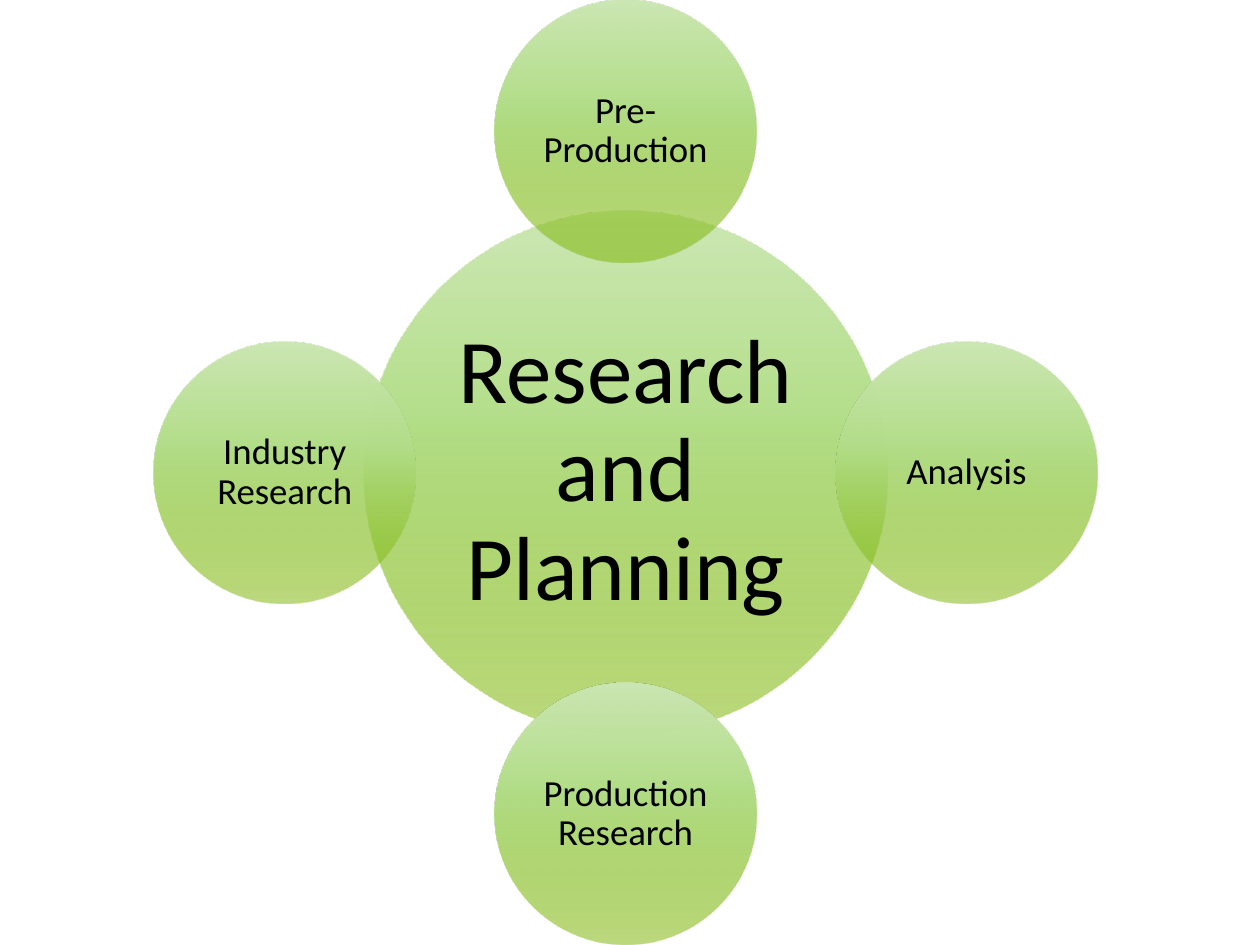
from dataclasses import dataclass

from lxml.etree import SubElement
from pptx import Presentation
from pptx.dml.color import RGBColor
from pptx.enum.shapes import MSO_SHAPE
from pptx.enum.text import MSO_ANCHOR, PP_ALIGN
from pptx.oxml.ns import qn
from pptx.util import Inches, Pt


@dataclass(frozen=True)
class Theme:
    """Colours and type sizes of the slide."""
    font: str = "Calibri"
    text: str = "000000"
    hub_size: int = 52
    satellite_size: int = 21
    stops: tuple = ((0, "CCE7B4", 100), (40, "B3DE89", 100), (100, "7CB400", 50))


THEME = Theme()
HUB = 4.16
SATELLITE = HUB / 2
SATELLITES = (
    ("Pre-Production", 0, -1),
    ("Analysis", 1, 0),
    ("Production Research", 0, 1),
    ("Industry Research", -1, 0),
)


def fill_gradient(shape):
    """Fill a shape from top to bottom with the theme's gradient stops."""
    shape.fill.gradient()
    shape.fill.gradient_angle = 270
    stop_list = shape.element.spPr.find(qn("a:gradFill")).find(qn("a:gsLst"))
    for stop in list(stop_list):
        stop_list.remove(stop)
    for position, colour, opacity in THEME.stops:
        stop = SubElement(stop_list, qn("a:gs"), pos=str(position * 1000))
        tint = SubElement(stop, qn("a:srgbClr"), val=colour)
        if opacity < 100:
            SubElement(tint, qn("a:alpha"), val=str(opacity * 1000))


def add_circle(page, box, label, size, inset):
    """Place a labelled gradient circle in the box (left, top, width, height)."""
    circle = page.shapes.add_shape(MSO_SHAPE.OVAL, *map(Inches, box))
    circle.shadow.inherit = False
    circle.line.fill.background()
    fill_gradient(circle)
    frame = circle.text_frame
    frame.word_wrap = True
    frame.vertical_anchor = MSO_ANCHOR.MIDDLE
    frame.margin_left = frame.margin_right = Inches(inset)
    frame.margin_top = frame.margin_bottom = Inches(inset)
    para = frame.paragraphs[0]
    para.text = label
    para.alignment = PP_ALIGN.CENTER
    para.line_spacing = 0.9
    para.font.name = THEME.font
    para.font.size = Pt(size)
    para.font.color.rgb = RGBColor.from_string(THEME.text)


def add_radial_diagram(page, box):
    """Place the hub and its four satellites in the given box."""
    left, top, width, height = box
    center_x, center_y = left + width / 2, top + height / 2
    orbit_x, orbit_y = (width - SATELLITE) / 2, (height - SATELLITE) / 2

    def square(x, y, size):
        """Return the box of a square centred on a point."""
        return x - size / 2, y - size / 2, size, size

    add_circle(page, square(center_x, center_y, HUB),
               "Research and Planning", THEME.hub_size, 0.07)
    for label, across, down in SATELLITES:
        place = square(center_x + across * orbit_x, center_y + down * orbit_y, SATELLITE)
        add_circle(page, place, label, THEME.satellite_size, 0.03)


def main():
    """Build the deck and save it."""
    deck = Presentation()
    deck.slide_width, deck.slide_height = Inches(10), Inches(7.5)
    page = deck.slides.add_slide(deck.slide_layouts[6])
    add_radial_diagram(page, (1.22, 0, 7.49, 7.5))
    deck.save("out.pptx")


if __name__ == "__main__":
    main()
